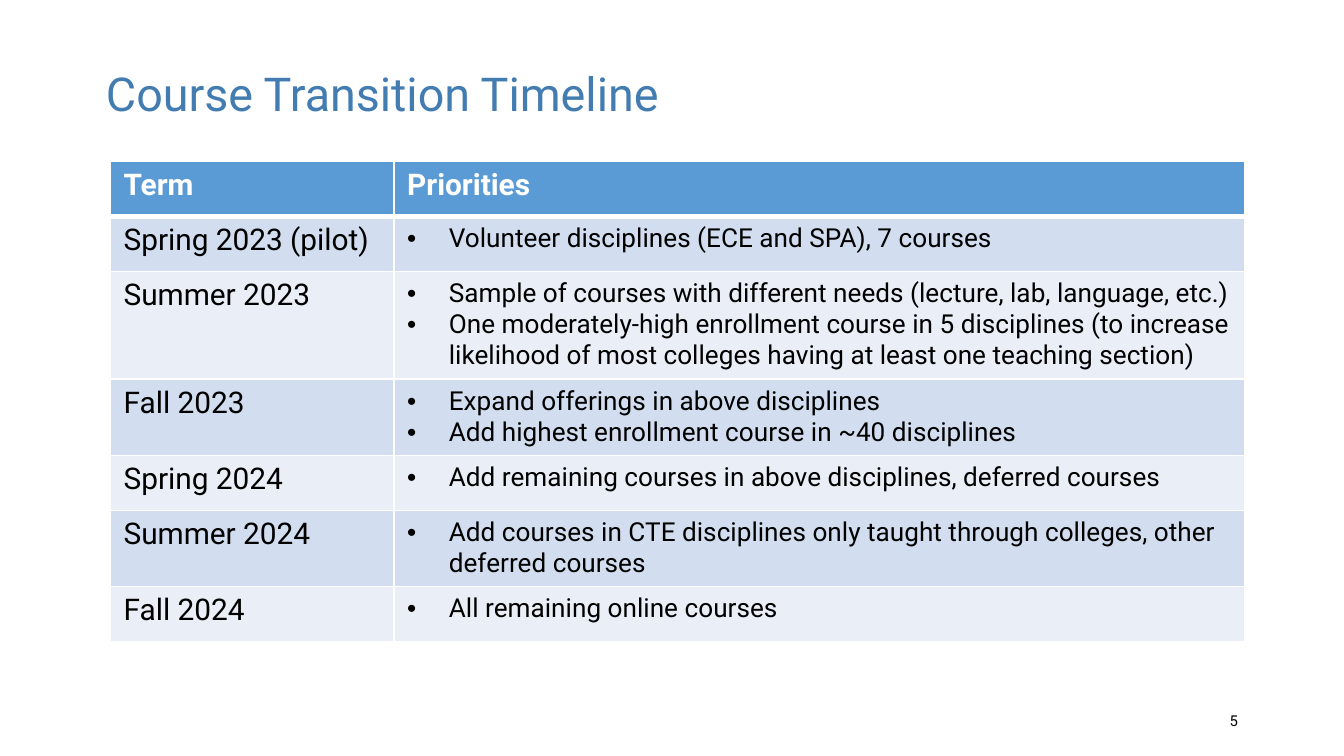
from dataclasses import dataclass

from lxml.etree import SubElement
from pptx import Presentation
from pptx.dml.color import RGBColor
from pptx.enum.text import MSO_ANCHOR, PP_ALIGN
from pptx.oxml.ns import qn
from pptx.util import Inches, Pt


@dataclass(frozen=True)
class Theme:
    font: str = "Roboto"
    title: str = "427CB1"
    header: str = "5B9BD5"
    bands: tuple = ("D2DEEF", "EAEFF7")
    white: str = "FFFFFF"
    black: str = "000000"
    title_size: int = 25
    term_size: int = 16
    priority_size: int = 14
    number_size: int = 8
    border: int = 1
    header_border: int = 3


THEME = Theme()
ROW_HEIGHT = 0.41
TWO_LINE_HEIGHT = 0.55
COLUMNS = (2.11, 6.33)
HEADINGS = ("Term", "Priorities")
# Term, row height, priorities
TERMS = (
    ("Spring 2023 (pilot)", ROW_HEIGHT, ["Volunteer disciplines (ECE and SPA), 7 courses"]),
    ("Summer 2023", 0.79, [
        "Sample of courses with different needs (lecture, lab, language, etc.)",
        "One moderately-high enrollment course in 5 disciplines (to increase "
        "likelihood of most colleges having at least one teaching section)",
    ]),
    ("Fall 2023", TWO_LINE_HEIGHT, [
        "Expand offerings in above disciplines",
        "Add highest enrollment course in ~40 disciplines",
    ]),
    ("Spring 2024", ROW_HEIGHT, [
        "Add remaining courses in above disciplines, deferred courses",
    ]),
    ("Summer 2024", TWO_LINE_HEIGHT, [
        "Add courses in CTE disciplines only taught through colleges, other deferred courses",
    ]),
    ("Fall 2024", ROW_HEIGHT, ["All remaining online courses"]),
)


def write(para, text, size, color, bold=False):
    span = para.add_run()
    span.text = text
    style = {"name": THEME.font, "size": Pt(size), "bold": bold}
    for name, value in style.items():
        setattr(span.font, name, value)
    span.font.color.rgb = RGBColor.from_string(color)


def add_bullet(para):
    """Give a paragraph a round bullet with a hanging indent."""
    properties = para._p.get_or_add_pPr()
    indent = Inches(0.31)
    for name, value in {"marL": indent, "indent": -indent}.items():
        properties.set(name, str(value))
    SubElement(properties, qn("a:buFont"), typeface="Arial")
    SubElement(properties, qn("a:buChar"), char="•")


def style_cell(cell, fill, top, bottom):
    """Draw white borders, with the given top and bottom widths, then fill."""
    properties = cell._tc.get_or_add_tcPr()
    widths = {"lnL": THEME.border, "lnR": THEME.border, "lnT": top, "lnB": bottom}
    for side, width in widths.items():
        line = SubElement(properties, qn(f"a:{side}"), w=str(Pt(width)))
        paint = SubElement(line, qn("a:solidFill"))
        SubElement(paint, qn("a:srgbClr"), val=THEME.white)
    cell.fill.solid()
    cell.fill.fore_color.rgb = RGBColor.from_string(fill)


def add_text(page, box, text, size, color, align=PP_ALIGN.LEFT, spacing=1.0):
    frame = page.shapes.add_textbox(*map(Inches, box)).text_frame
    frame.word_wrap = True
    frame.vertical_anchor = MSO_ANCHOR.MIDDLE
    para = frame.paragraphs[0]
    para.alignment = align
    para.line_spacing = spacing
    write(para, text, size, color)


def add_timeline(page, box):
    table = page.shapes.add_table(len(TERMS) + 1, len(COLUMNS), *map(Inches, box)).table
    for column, width in zip(table.columns, COLUMNS):
        column.width = Inches(width)

    table.rows[0].height = Inches(ROW_HEIGHT)
    for cell, heading in zip(table.rows[0].cells, HEADINGS):
        style_cell(cell, THEME.header, THEME.border, THEME.header_border)
        write(cell.text_frame.paragraphs[0], heading, THEME.term_size, THEME.white, bold=True)

    for index, (term, height, priorities) in enumerate(TERMS):
        row = table.rows[index + 1]
        row.height = Inches(height)
        top = THEME.border if index else THEME.header_border
        for cell in row.cells:
            style_cell(cell, THEME.bands[index % 2], top, THEME.border)
        term_cell, priority_cell = row.cells
        write(term_cell.text_frame.paragraphs[0], term, THEME.term_size, THEME.black)
        frame = priority_cell.text_frame
        for position, priority in enumerate(priorities):
            para = frame.add_paragraph() if position else frame.paragraphs[0]
            add_bullet(para)
            write(para, priority, THEME.priority_size, THEME.black)


def build_timeline_page(deck):
    page = deck.slides.add_slide(deck.slide_layouts[6])
    add_text(page, (0.69, 0.3, 8.62, 0.84), "Course Transition Timeline",
             THEME.title_size, THEME.title, spacing=0.9)
    add_timeline(page, (0.82, 1.2, sum(COLUMNS), 3.56))
    add_text(page, (7.06, 5.21, 2.25, 0.3), "5",
             THEME.number_size, THEME.black, PP_ALIGN.RIGHT)


def main():
    deck = Presentation()
    deck.slide_width = Inches(10)
    deck.slide_height = deck.slide_width * 9 // 16
    build_timeline_page(deck)
    deck.save("out.pptx")


if __name__ == "__main__":
    main()
